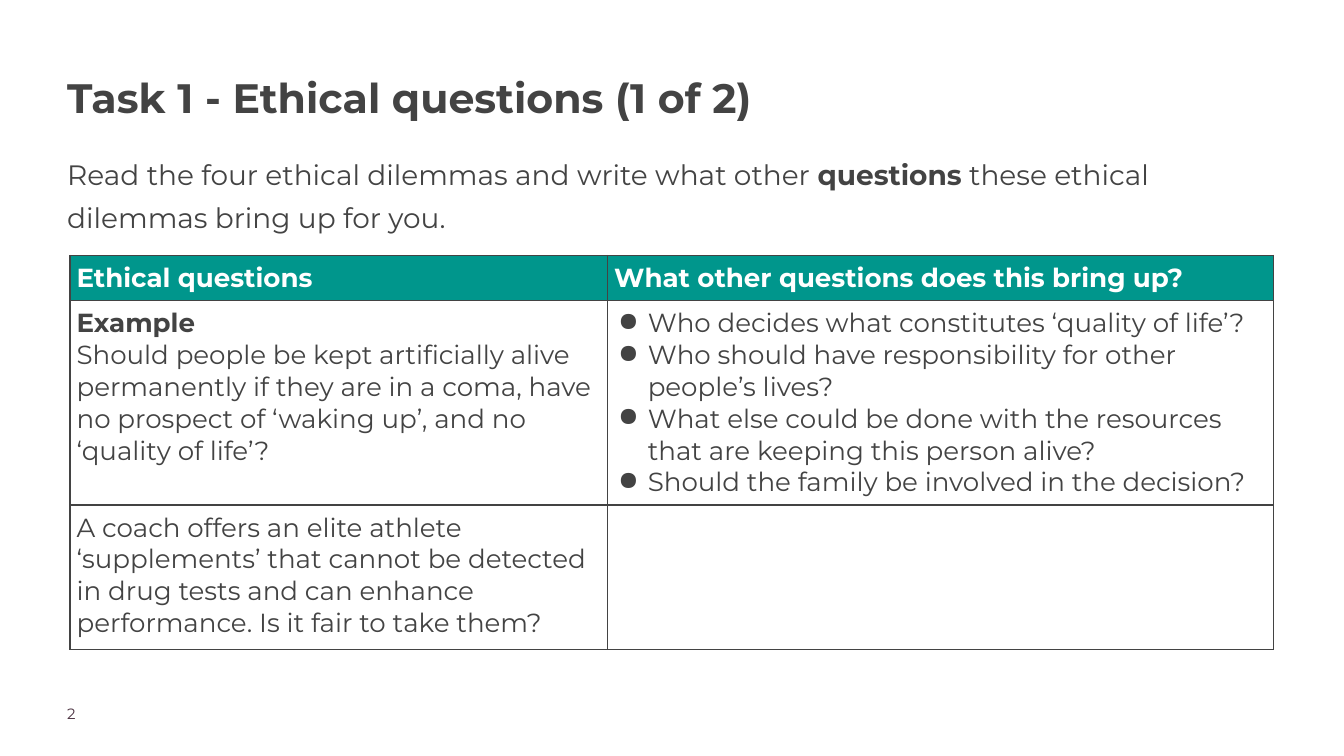
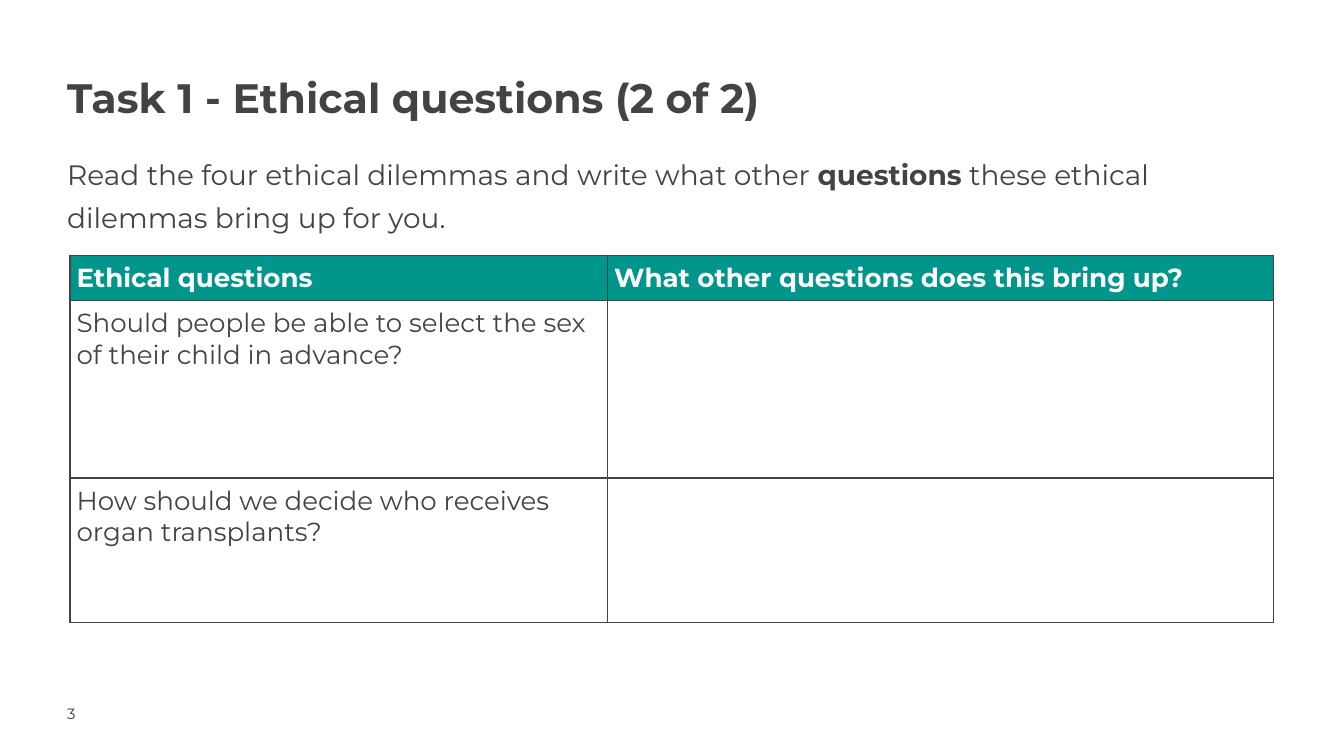
from dataclasses import dataclass

from lxml import etree
from pptx import Presentation
from pptx import util as u
from pptx.dml.color import RGBColor
from pptx.enum import text
from pptx.oxml import ns

PX_PER_INCH = 100


@dataclass(frozen=True)
class Theme:
    font: str = "Montserrat"
    ink: str = "434343"
    header: str = "00968C"
    header_ink: str = "FFFFFF"
    number_ink: str = "4B3241"
    title_size: int = 44
    body_size: int = 30
    table_size: int = 28
    number_size: int = 16
    border_width: float = 1.5


THEME = Theme()

TITLE_AREA = (100, 97, 1390, 178)
TASK_AREA = (100, 219, 1799, 127)
NUMBER_AREA = (100, 1048, 157, 39)
TABLE_CORNER = (104, 380)
COLUMN_WIDTHS = (800, 991)
ROW_HEIGHTS = (11, 264, 215)  # the header row grows to fit its text
CELL_MARGIN = 10
BULLET_INDENT, BULLET_HANG = 50, 44

FIRST_NUMBER = 2
TASK = [
    ("Read the four ethical dilemmas and write what other ", False),
    ("questions", True),
    (" these ethical dilemmas bring up for you.", False),
]
HEADINGS = ("Ethical questions", "What other questions does this bring up?")

# Each dilemma: optional label, question, follow-up questions.
PAGES = [
    [
        (
            "Example",
            "Should people be kept artificially alive permanently if they are in a coma, "
            "have no prospect of ‘waking up’, and no ‘quality of life’?",
            [
                "Who decides what constitutes ‘quality of life’?",
                "Who should have responsibility for other people’s lives?",
                "What else could be done with the resources that are keeping this person alive?",
                "Should the family be involved in the decision?",
            ],
        ),
        (
            None,
            "A coach offers an elite athlete ‘supplements’ that cannot be detected in drug "
            "tests and can enhance performance. Is it fair to take them?",
            [],
        ),
    ],
    [
        (None, "Should people be able to select the sex of their child in advance?", []),
        (None, "How should we decide who receives organ transplants?", []),
    ],
]


def px(length):
    return u.Emu(length * u.Inches(1) // PX_PER_INCH)


def add_run(paragraph, words, size, color=THEME.ink, bold=False):
    run = paragraph.add_run()
    run.text = words
    run.font.name = THEME.font
    run.font.size = u.Pt(size)
    run.font.bold = bold
    run.font.color.rgb = RGBColor.from_string(color)


def add_colored(parent, tag, color):
    holder = etree.SubElement(parent, ns.qn(tag))
    etree.SubElement(holder, ns.qn("a:srgbClr"), val=color)


def set_indent(paragraph, left, hang):
    properties = paragraph._p.get_or_add_pPr()
    properties.set("marL", str(px(left)))
    properties.set("indent", str(-px(hang)))
    return properties


def add_bullet(paragraph):
    properties = set_indent(paragraph, BULLET_INDENT, BULLET_HANG)
    add_colored(properties, "a:buClr", THEME.ink)
    etree.SubElement(properties, ns.qn("a:buChar"), char="●")


def prepare_frame(shape, area):
    """Place a text shape, remove its insets and return its first paragraph."""
    shape.left, shape.top, shape.width, shape.height = map(px, area)
    frame = shape.text_frame
    frame.margin_left = frame.margin_top = frame.margin_right = frame.margin_bottom = 0
    frame.word_wrap = True
    frame.auto_size = text.MSO_AUTO_SIZE.NONE
    frame.vertical_anchor = text.MSO_ANCHOR.TOP
    paragraph = frame.paragraphs[0]
    paragraph.alignment = text.PP_ALIGN.LEFT
    paragraph.space_before = u.Pt(0)
    return paragraph


def add_title(slide, words):
    paragraph = prepare_frame(slide.shapes.title, TITLE_AREA)
    paragraph.line_spacing = 1.15
    add_run(paragraph, words, THEME.title_size, bold=True)


def add_task(slide):
    paragraph = prepare_frame(slide.placeholders[1], TASK_AREA)
    paragraph.line_spacing = 1.3
    etree.SubElement(set_indent(paragraph, 0, 0), ns.qn("a:buNone"))
    for words, bold in TASK:
        add_run(paragraph, words, THEME.body_size, bold=bold)


def add_number(slide, number):
    area = map(px, NUMBER_AREA)
    paragraph = prepare_frame(slide.shapes.add_textbox(*area), NUMBER_AREA)
    add_run(paragraph, str(number), THEME.number_size, THEME.number_ink)


def style_cell(cell, is_header):
    cell.margin_left = cell.margin_right = px(CELL_MARGIN)
    cell.margin_top = cell.margin_bottom = px(CELL_MARGIN)
    properties = cell._tc.get_or_add_tcPr()
    for side in "LRTB":
        width = str(u.Pt(THEME.border_width))
        border = etree.SubElement(properties, ns.qn(f"a:ln{side}"), w=width)
        add_colored(border, "a:solidFill", THEME.ink)
    if is_header:
        cell.fill.solid()
        cell.fill.fore_color.rgb = RGBColor.from_string(THEME.header)
    else:
        cell.fill.background()


def fill_dilemma(question_cell, follow_up_cell, dilemma):
    label, question, follow_ups = dilemma
    paragraph = question_cell.text_frame.paragraphs[0]
    if label:
        add_run(paragraph, label, THEME.table_size, bold=True)
        paragraph = question_cell.text_frame.add_paragraph()
    add_run(paragraph, question, THEME.table_size)

    frame = follow_up_cell.text_frame
    for index, follow_up in enumerate(follow_ups):
        paragraph = frame.add_paragraph() if index else frame.paragraphs[0]
        add_bullet(paragraph)
        add_run(paragraph, follow_up, THEME.table_size)


def add_dilemma_table(slide, dilemmas):
    size = (sum(COLUMN_WIDTHS), sum(ROW_HEIGHTS))
    area = map(px, TABLE_CORNER + size)
    table = slide.shapes.add_table(len(ROW_HEIGHTS), len(COLUMN_WIDTHS), *area).table
    table.first_row = table.horz_banding = False
    for column, width in zip(table.columns, COLUMN_WIDTHS):
        column.width = px(width)
    for index, (row, height) in enumerate(zip(table.rows, ROW_HEIGHTS)):
        row.height = px(height)
        for cell in row.cells:
            style_cell(cell, is_header=index == 0)

    for column, heading in enumerate(HEADINGS):
        paragraph = table.cell(0, column).text_frame.paragraphs[0]
        add_run(paragraph, heading, THEME.table_size, THEME.header_ink, bold=True)
    for row, dilemma in enumerate(dilemmas, start=1):
        fill_dilemma(table.cell(row, 0), table.cell(row, 1), dilemma)


def main():
    deck = Presentation()
    deck.slide_width, deck.slide_height = px(2000), px(1125)
    for index, dilemmas in enumerate(PAGES):
        slide = deck.slides.add_slide(deck.slide_layouts[1])
        add_title(slide, f"Task 1 - Ethical questions ({index + 1} of {len(PAGES)})")
        add_task(slide)
        add_number(slide, FIRST_NUMBER + index)
        add_dilemma_table(slide, dilemmas)
    deck.save("out.pptx")


if __name__ == "__main__":
    main()
